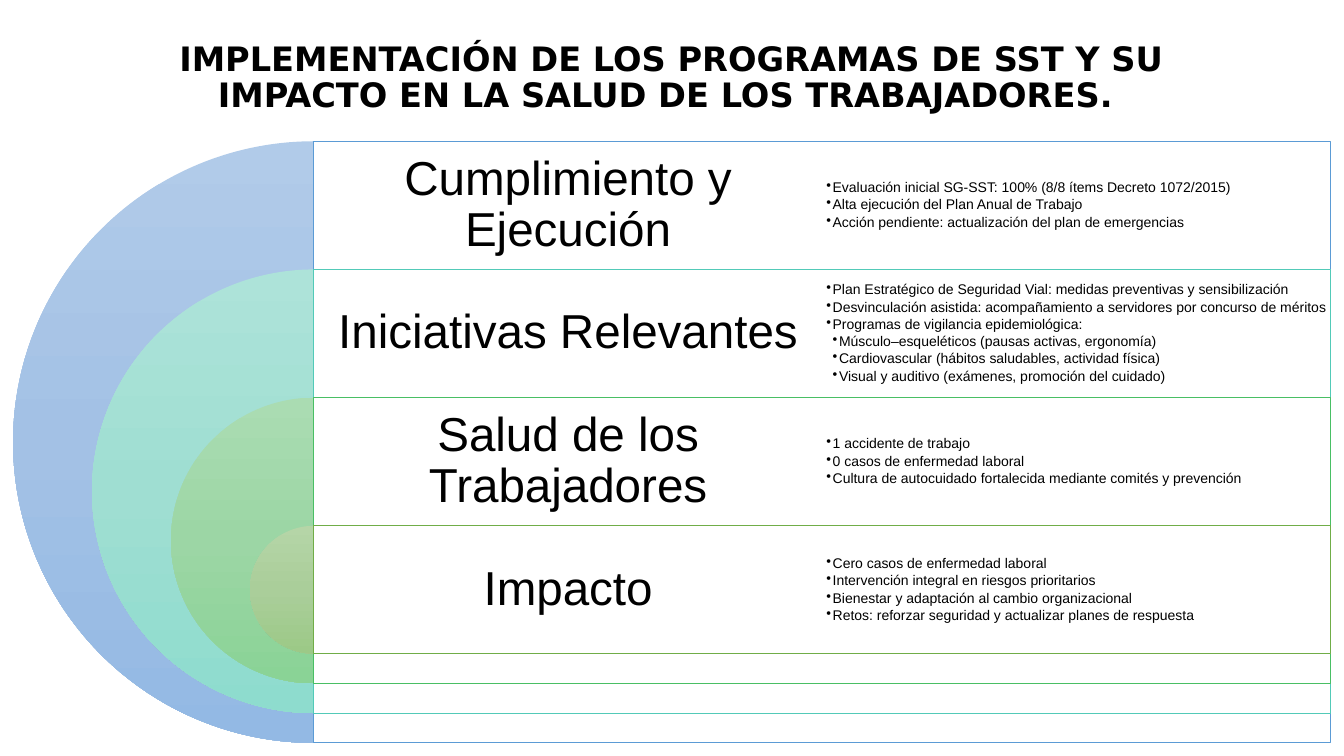
import copy

import lxml.etree
import pptx
import pptx.dml.color
import pptx.enum.shapes
import pptx.enum.text
import pptx.oxml.ns
import pptx.util

Cm = pptx.util.Cm
Pt = pptx.util.Pt
qn = pptx.oxml.ns.qn
ALIGN = pptx.enum.text.PP_ALIGN
ANCHOR = pptx.enum.text.MSO_ANCHOR
SHAPE = pptx.enum.shapes.MSO_SHAPE

COLORS = {"text": "000000", "panel": "FFFFFF"}

TITLE = {"size": Pt(24), "name": "DejaVu Sans", "bold": True}
HEADING = {"size": Pt(34), "name": "Arial"}
DETAIL = {"size": Pt(10), "name": "Arial"}

# Each topic: heading, arc gradient, panel line, bullets as (level, wording)
TOPICS = [
    ("Cumplimiento y Ejecución", ("B1CBE9", "A3C1E5", "93B9E4"), "5B9BD5", [
        (1, "Evaluación inicial SG-SST: 100% (8/8 ítems Decreto 1072/2015)"),
        (1, "Alta ejecución del Plan Anual de Trabajo"),
        (1, "Acción pendiente: actualización del plan de emergencias"),
    ]),
    ("Iniciativas Relevantes", ("ADE3D9", "9FDED2", "8EDCCE"), "52CAB8", [
        (1, "Plan Estratégico de Seguridad Vial: medidas preventivas y sensibilización"),
        (1, "Desvinculación asistida: acompañamiento a servidores por concurso de méritos"),
        (1, "Programas de vigilancia epidemiológica:"),
        (2, "Músculo–esqueléticos (pausas activas, ergonomía)"),
        (2, "Cardiovascular (hábitos saludables, actividad física)"),
        (2, "Visual y auditivo (exámenes, promoción del cuidado)"),
    ]),
    ("Salud de los Trabajadores", ("AADCB2", "9CD6A5", "8AD396"), "49BF64", [
        (1, "1 accidente de trabajo"),
        (1, "0 casos de enfermedad laboral"),
        (1, "Cultura de autocuidado fortalecida mediante comités y prevención"),
    ]),
    ("Impacto", ("B5D5A7", "AACE9A", "9CC987"), "70AD47", [
        (1, "Cero casos de enfermedad laboral"),
        (1, "Intervención integral en riesgos prioritarios"),
        (1, "Bienestar y adaptación al cambio organizacional"),
        (1, "Retos: reforzar seguridad y actualizar planes de respuesta"),
    ]),
]

# Layout in centimetres
TOP = 3.56
ROW = 3.23
PANEL_LEFT = 7.91
PANEL_WIDTH = 25.63
COLUMN = PANEL_WIDTH / 2
DIAMETER = 15.16
SHRINK = 3.98
BULLET_INDENT = 0.16


def rgb(value):
    return pptx.dml.color.RGBColor.from_string(value)


class SlideBuilder:
    def __init__(self, page):
        self.page = page

    def shape(self, kind, left, top, width, height):
        shape = self.page.shapes.add_shape(
            kind, Cm(left), Cm(top), Cm(width), Cm(height))
        shape.shadow.inherit = False
        return shape

    def half_disc(self, center, top, diameter, gradient):
        disc = self.shape(SHAPE.PIE, center - diameter / 2, top, diameter, diameter)
        disc.adjustments[0] = 54
        disc.adjustments[1] = 162
        disc.line.fill.background()
        disc.fill.gradient()
        disc.fill.gradient_angle = 270
        stop_list = disc.fill._xPr.find(qn("a:gradFill")).find(qn("a:gsLst"))
        stop_list.insert(1, copy.deepcopy(stop_list[0]))
        for stop, position, color in zip(disc.fill.gradient_stops, (0, 0.5, 1), gradient):
            stop.position = position
            stop.color.rgb = rgb(color)

    def panel(self, left, top, width, height, line_color):
        panel = self.shape(SHAPE.RECTANGLE, left, top, width, height)
        panel.fill.solid()
        panel.fill.fore_color.rgb = rgb(COLORS["panel"])
        color = panel.fill._xPr.find(qn("a:solidFill"))[0]
        lxml.etree.SubElement(color, qn("a:alpha")).set("val", "90000")
        panel.line.color.rgb = rgb(line_color)
        panel.line.width = Pt(0.5)

    def text(self, left, top, width, height, items, style, align,
             anchor=ANCHOR.MIDDLE, inset=None, after=0):
        """Items are (level, wording); a level above zero gets a bullet."""
        box = self.page.shapes.add_textbox(Cm(left), Cm(top), Cm(width), Cm(height))
        frame = box.text_frame
        frame.word_wrap = True
        frame.vertical_anchor = anchor
        if inset is not None:
            for side in ("left", "top", "right", "bottom"):
                setattr(frame, f"margin_{side}", Cm(inset))
        for number, (level, wording) in enumerate(items):
            para = frame.add_paragraph() if number else frame.paragraphs[0]
            para.alignment = align
            para.level = level
            para.line_spacing = 0.9
            self.spacing_and_bullet(para, level, after)
            span = para.add_run()
            span.text = wording
            span.font.color.rgb = rgb(COLORS["text"])
            for name, value in style.items():
                setattr(span.font, name, value)

    def spacing_and_bullet(self, para, level, after):
        props = para._p.get_or_add_pPr()
        if after:
            space = lxml.etree.SubElement(props, qn("a:spcAft"))
            lxml.etree.SubElement(space, qn("a:spcPct")).set("val", str(after * 1000))
        if level:
            props.set("marL", str(Cm(BULLET_INDENT * level)))
            props.set("indent", str(-Cm(BULLET_INDENT)))
            lxml.etree.SubElement(props, qn("a:buChar")).set("char", "•")


def main():
    deck = pptx.Presentation()
    deck.slide_width = Cm(33.87)
    deck.slide_height = Cm(19.05)
    builder = SlideBuilder(deck.slides.add_slide(deck.slide_layouts[6]))

    # Title
    title = ("IMPLEMENTACIÓN DE LOS PROGRAMAS DE SST Y SU IMPACTO "
             "EN LA SALUD DE LOS TRABAJADORES. ")
    builder.text(2.31, 0.58, 29.21, 2.44, [(0, title)], TITLE, ALIGN.CENTER,
                 anchor=ANCHOR.BOTTOM)

    # Nested arcs, panels and headings
    for row, (heading, gradient, line_color, _) in enumerate(TOPICS):
        top = TOP + row * ROW
        diameter = DIAMETER - row * SHRINK
        builder.half_disc(PANEL_LEFT, top, diameter, gradient)
        builder.panel(PANEL_LEFT, top, PANEL_WIDTH, diameter, line_color)
        builder.text(PANEL_LEFT, top, COLUMN, ROW, [(0, heading)], HEADING,
                     ALIGN.CENTER, inset=0.36, after=35)

    # Bullets lie above every panel
    for row, (_, _, _, bullets) in enumerate(TOPICS):
        builder.text(PANEL_LEFT + COLUMN, TOP + row * ROW, COLUMN, ROW, bullets,
                     DETAIL, ALIGN.LEFT, inset=0.1, after=15)

    deck.save("out.pptx")


if __name__ == "__main__":
    main()
